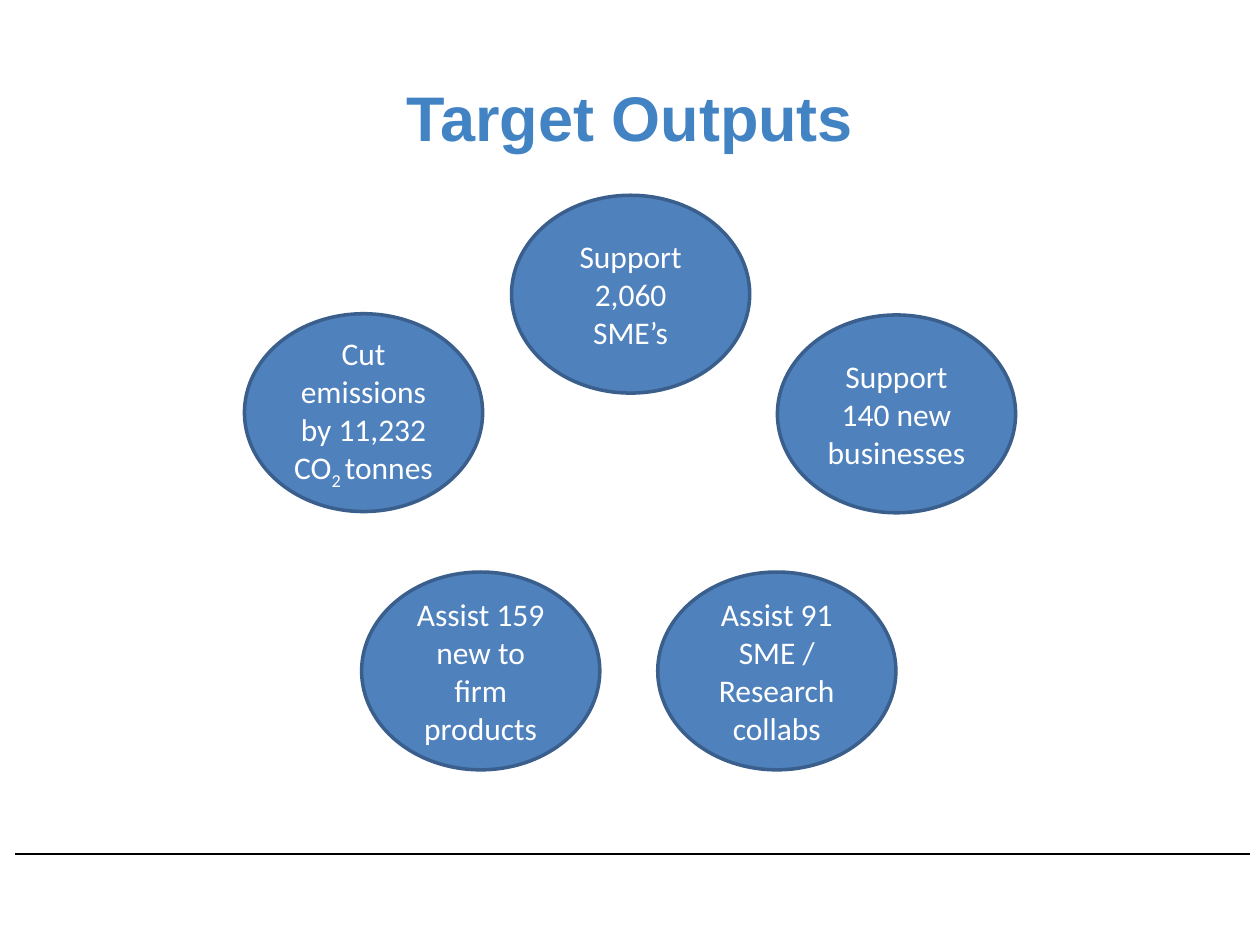
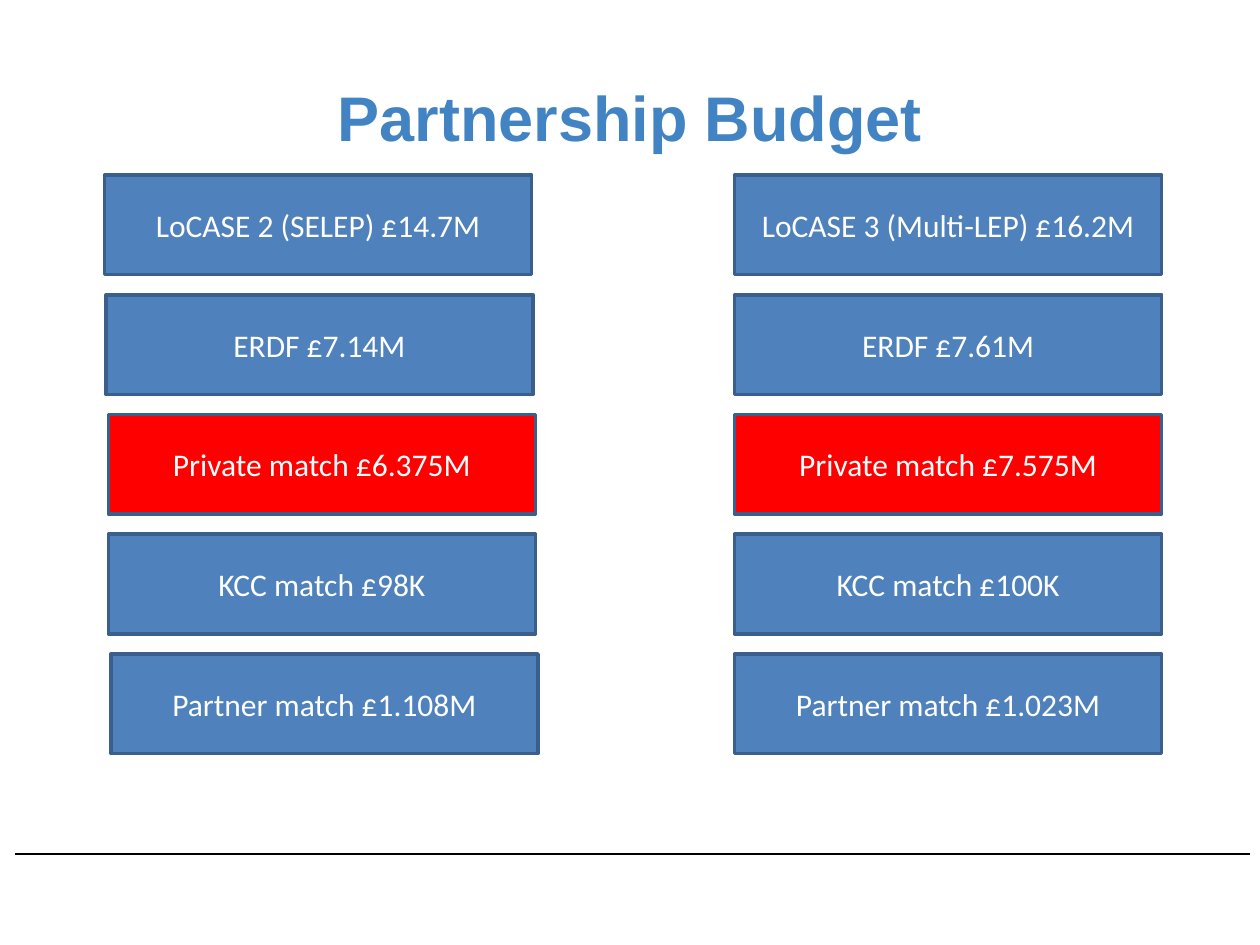
"""Build the target outputs and partnership budget slides."""
import pptx
import pptx.dml.color
import pptx.enum.shapes
import pptx.enum.text
import pptx.oxml
import pptx.oxml.ns
import pptx.util

Inches = pptx.util.Inches
SHAPES = pptx.enum.shapes.MSO_SHAPE

COLOURS = {
    "title": "4283C4",
    "fill": "4F81BD",
    "outline": "3A5F8C",
    "highlight": "FF0000",
    "text": "FFFFFF",
    "rule": "000000",
}
OVAL_SIZE = (1.89, 1.57)
BOX_SIZE = (3.39, 0.79)
BOX_TOP = 1.39
BOX_PITCH = 0.95

TARGETS = [
    (1.94, 2.49, ["Cut emissions by 11,232 CO", "2 ", "tonnes"]),
    (5.22, 4.54, ["Assist 91 SME / Research collabs"]),
    (6.17, 2.5, ["Support 140 new businesses"]),
    (4.06, 1.55, ["Support 2,060 SME’s"]),
    (2.87, 4.54, ["Assist 159 new to firm products"]),
]
BUDGETS = [
    (
        (0.83, 0.84, 0.86, 0.86, 0.88),
        ("LoCASE 2 (SELEP) £14.7M", "ERDF £7.14M", "Private match £6.375M",
         "KCC match £98K", "Partner match £1.108M"),
    ),
    (
        (5.83,) * 5,
        ("LoCASE 3 (Multi-LEP) £16.2M", "ERDF £7.61M", "Private match £7.575M",
         "KCC match £100K", "Partner match £1.023M"),
    ),
]


def colour(name):
    """Return the named colour."""
    return pptx.dml.color.RGBColor.from_string(COLOURS[name])


def style_font(font, name, size, colour_name, bold=False):
    """Set the face, size, colour and weight of a font."""
    font.name = name
    font.size = pptx.util.Pt(size)
    font.bold = bold
    font.color.rgb = colour(colour_name)


def add_title(slide, text):
    """Add the centred slide title."""
    box = slide.shapes.add_textbox(Inches(0.5), Inches(0.3), Inches(9), Inches(1.25))
    frame = box.text_frame
    frame.word_wrap = True
    frame.vertical_anchor = pptx.enum.text.MSO_ANCHOR.MIDDLE
    frame.text = text
    paragraph = frame.paragraphs[0]
    paragraph.alignment = pptx.enum.text.PP_ALIGN.CENTER
    style_font(paragraph.runs[0].font, "Arial", 36, "title", bold=True)


def add_footer_rule(slide):
    """Add the thin line above the footer area."""
    rule = slide.shapes.add_connector(
        pptx.enum.shapes.MSO_CONNECTOR.STRAIGHT,
        Inches(0.12), Inches(6.78), Inches(9.92), Inches(6.78))
    rule.line.color.rgb = colour("rule")
    rule.line.width = pptx.util.Pt(1)
    properties = rule.element.find(pptx.oxml.ns.qn("p:spPr"))
    properties.append(pptx.oxml.parse_xml(
        f'<a:effectLst {pptx.oxml.ns.nsdecls("a")}/>'))


def add_slide(presentation, title):
    """Add a blank slide with the shared line and title."""
    slide = presentation.slides.add_slide(presentation.slide_layouts[6])
    add_footer_rule(slide)
    add_title(slide, title)
    return slide


def add_label_shape(slide, kind, left, top, size, pieces, fill="fill"):
    """Add an outlined shape whose second text piece, if any, is a subscript."""
    shape = slide.shapes.add_shape(
        kind, Inches(left), Inches(top), Inches(size[0]), Inches(size[1]))
    shape.shadow.inherit = False
    shape.fill.solid()
    shape.fill.fore_color.rgb = colour(fill)
    shape.line.color.rgb = colour("outline")
    shape.line.width = pptx.util.Pt(2)
    frame = shape.text_frame
    frame.word_wrap = True
    frame.vertical_anchor = pptx.enum.text.MSO_ANCHOR.MIDDLE
    frame.text = pieces[0]
    paragraph = frame.paragraphs[0]
    paragraph.alignment = pptx.enum.text.PP_ALIGN.CENTER
    for piece in pieces[1:]:
        paragraph.add_run().text = piece
    for run in paragraph.runs:
        style_font(run.font, "Calibri", 18, "text")
    for run in paragraph.runs[1:2]:
        run._r.get_or_add_rPr().set("baseline", "-25000")


def add_targets(slide):
    """Add the ring of target ovals."""
    for left, top, pieces in TARGETS:
        add_label_shape(slide, SHAPES.FLOWCHART_CONNECTOR, left, top, OVAL_SIZE, pieces)


def add_budget_column(slide, lefts, labels):
    """Add one column of evenly spaced budget boxes."""
    for row, (left, label) in enumerate(zip(lefts, labels)):
        fill = "highlight" if label.startswith("Private") else "fill"
        add_label_shape(slide, SHAPES.RECTANGLE, left, BOX_TOP + row * BOX_PITCH,
                        BOX_SIZE, [label], fill)


def main():
    """Build and save the presentation."""
    presentation = pptx.Presentation()
    presentation.slide_width = Inches(10)
    presentation.slide_height = Inches(7.5)
    add_targets(add_slide(presentation, "Target Outputs"))
    budget_slide = add_slide(presentation, "Partnership Budget")
    for lefts, labels in BUDGETS:
        add_budget_column(budget_slide, lefts, labels)
    presentation.save("out.pptx")


if __name__ == "__main__":
    main()
